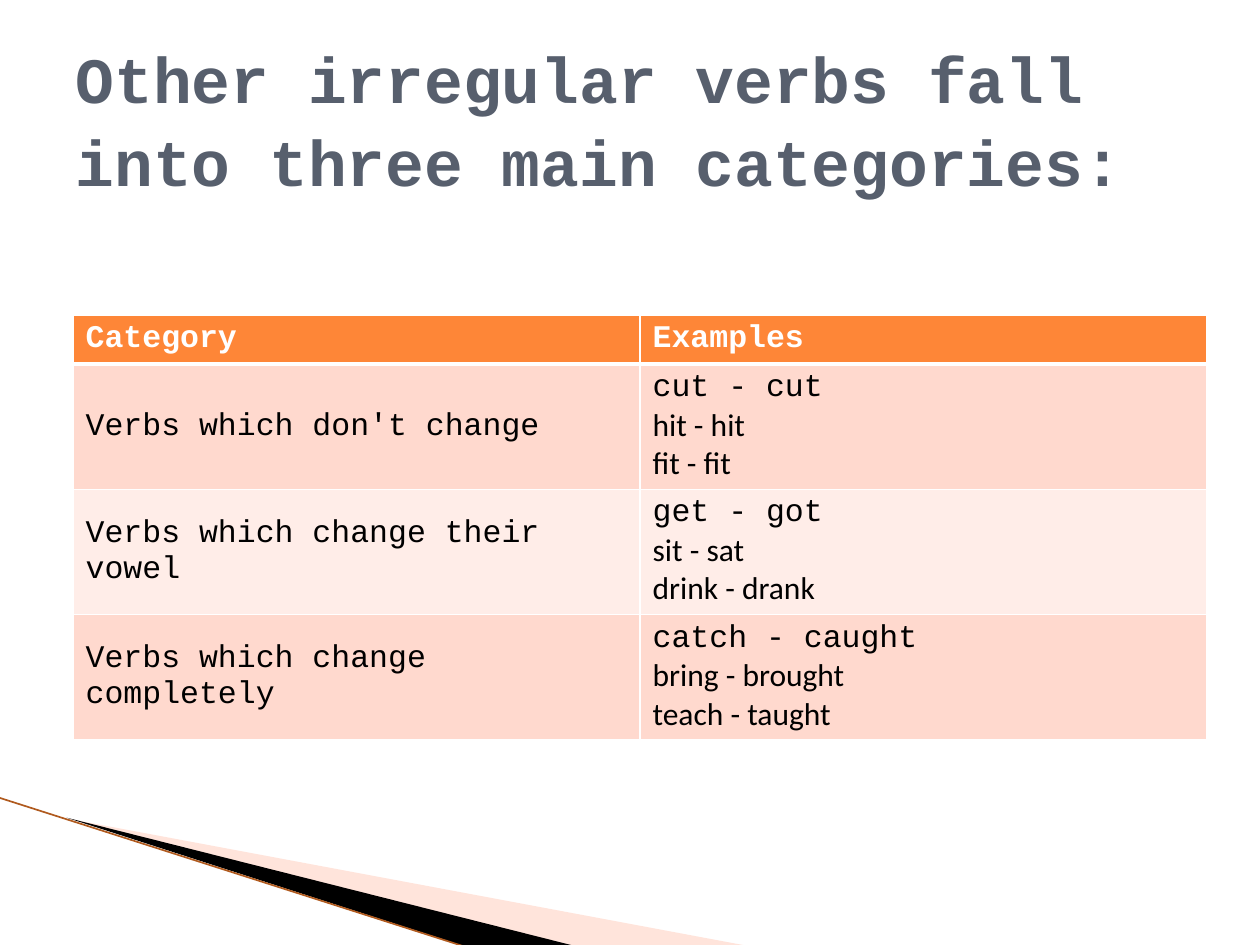
from dataclasses import dataclass

from lxml import etree
from pptx import Presentation
from pptx import util as u
from pptx.dml.color import RGBColor
from pptx.enum import shapes, text
from pptx.oxml.ns import qn

COLORS = {
    "title": "575F6D",
    "header": "FE8637",
    "odd_row": "FFD9CE",
    "even_row": "FFEDE8",
    "white": "FFFFFF",
    "black": "000000",
    "pale_wedge": "FFBCA5",
    "edge": "B05A1E",
}
FONT = "Courier New"


@dataclass(frozen=True)
class Wedge:
    points: tuple[tuple[float, float], ...]
    color: str
    opacity: int = 100


@dataclass(frozen=True)
class VerbRow:
    category: str
    examples: tuple[str, ...]
    fill: str
    height: float = 0.95
    color: str = "black"
    bold: bool = False
    bottom_border: float = 1


WEDGES = (
    Wedge(((0.55, 6.5), (5.95, 7.51), (4.56, 7.51)), "pale_wedge", 40),
    Wedge(((0.53, 6.49), (4.57, 7.51), (3.72, 7.52)), "black"),
)
ROWS = (
    VerbRow("Category", ("Examples",), "header", 0.39, "white", True, 3),
    VerbRow("Verbs which don't change", ("cut - cut", "hit - hit", "fit - fit"), "odd_row"),
    VerbRow("Verbs which change their vowel", ("get - got", "sit - sat", "drink - drank"), "even_row"),
    VerbRow("Verbs which change completely",
            ("catch - caught", "bring - brought", "teach - taught"), "odd_row"),
)


def rgb(name: str) -> RGBColor:
    return RGBColor.from_string(COLORS[name])


def apply(target, values: dict) -> None:
    for name, value in values.items():
        setattr(target, name, value)


def format_font(font, size: float, color: str, bold: bool) -> None:
    apply(font, {"name": FONT, "size": u.Pt(size), "bold": bold})
    font.color.rgb = rgb(color)


def draw_wedge(slide, wedge: Wedge) -> None:
    start, *others = [(u.Inches(x), u.Inches(y)) for x, y in wedge.points]
    builder = slide.shapes.build_freeform(*start)
    builder.add_line_segments(others, close=True)
    shape = builder.convert_to_shape()
    shape.shadow.inherit = False
    shape.line.fill.background()
    shape.fill.solid()
    shape.fill.fore_color.rgb = rgb(wedge.color)
    if wedge.opacity < 100:
        color = shape._element.spPr.find(qn("a:solidFill"))[0]
        etree.SubElement(color, qn("a:alpha"), val=str(wedge.opacity * 1000))


def draw_edge(slide) -> None:
    ends = [u.Inches(value) for value in (-0.01, 6.33, 3.71, 7.52)]
    connector = slide.shapes.add_connector(shapes.MSO_CONNECTOR.STRAIGHT, *ends)
    connector.line.color.rgb = rgb("edge")
    connector.line.width = u.Pt(0.95)
    etree.SubElement(connector._element.spPr, qn("a:effectLst"))


def set_borders(cell, top: float, bottom: float) -> None:
    properties = cell._tc.get_or_add_tcPr()
    widths = {"a:lnL": 1, "a:lnR": 1, "a:lnT": top, "a:lnB": bottom}
    for index, (tag, width) in enumerate(widths.items()):
        line = etree.Element(qn(tag), w=str(int(u.Pt(width))))
        fill = etree.SubElement(line, qn("a:solidFill"))
        etree.SubElement(fill, qn("a:srgbClr"), val=COLORS["white"])
        properties.insert(index, line)


def draw_table(slide, rows: tuple[VerbRow, ...]) -> None:
    height = sum(row.height for row in rows)
    frame = slide.shapes.add_table(
        len(rows), 2, u.Inches(0.58), u.Inches(2.5), u.Inches(9), u.Inches(height))
    table = frame.table
    top_border = 1
    for index, row in enumerate(rows):
        table.rows[index].height = u.Inches(row.height)
        for column, words in enumerate((row.category, "\v".join(row.examples))):
            cell = table.cell(index, column)
            cell.vertical_anchor = text.MSO_ANCHOR.MIDDLE
            cell.fill.solid()
            cell.fill.fore_color.rgb = rgb(row.fill)
            set_borders(cell, top_border, row.bottom_border)
            cell.text_frame.text = words
            format_font(cell.text_frame.paragraphs[0].runs[0].font, 18, row.color, row.bold)
        top_border = row.bottom_border


def draw_title(slide, words: str) -> None:
    title = slide.shapes.title
    apply(title, {"left": u.Inches(0.5), "top": u.Inches(0.3),
                  "width": u.Inches(9), "height": u.Inches(1.25)})
    title.text_frame.text = words
    apply(title.text_frame, {"word_wrap": True, "auto_size": text.MSO_AUTO_SIZE.NONE,
                             "vertical_anchor": text.MSO_ANCHOR.MIDDLE})
    paragraph = title.text_frame.paragraphs[0]
    apply(paragraph, {"alignment": text.PP_ALIGN.LEFT, "line_spacing": 1.07})
    format_font(paragraph.runs[0].font, 36.9, "title", True)


def main() -> None:
    presentation = Presentation()
    apply(presentation, {"slide_width": u.Inches(10), "slide_height": u.Inches(7.5)})
    slide = presentation.slides.add_slide(presentation.slide_layouts[5])
    for wedge in WEDGES:
        draw_wedge(slide, wedge)
    draw_edge(slide)
    draw_table(slide, ROWS)
    draw_title(slide, "Other irregular verbs fall into three main categories:")
    presentation.save("out.pptx")


if __name__ == "__main__":
    main()
